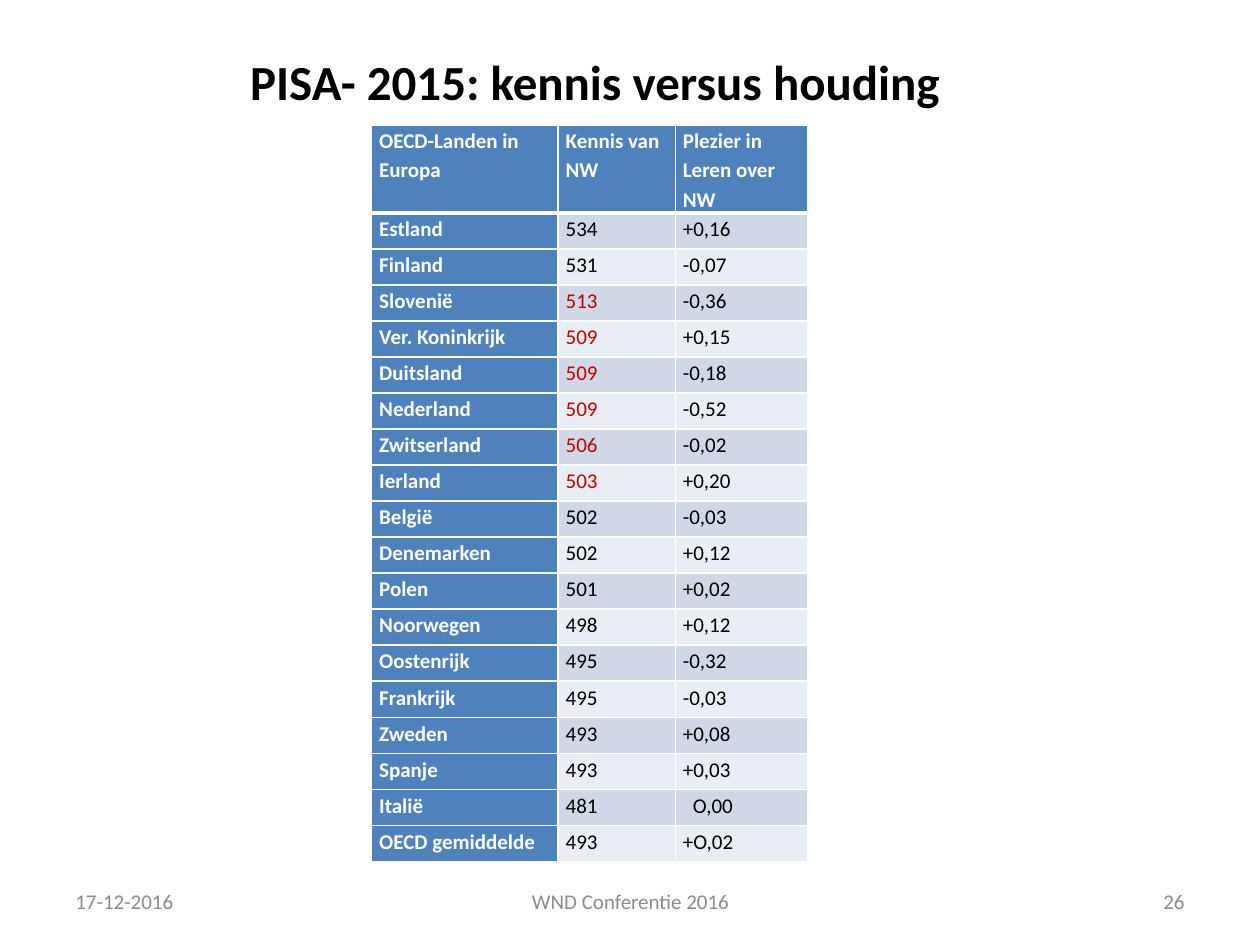
from lxml import etree
from pptx import Presentation
from pptx.dml.color import RGBColor
from pptx.enum.text import MSO_ANCHOR, PP_ALIGN
from pptx.oxml.ns import qn
from pptx.util import Emu, Inches, Pt

MIDDLE = MSO_ANCHOR.MIDDLE
LEFT, CENTER, RIGHT = PP_ALIGN.LEFT, PP_ALIGN.CENTER, PP_ALIGN.RIGHT

FONT = "Calibri"
COLORS = {
    "head": "4F81BD",
    "odd": "D0D8E8",
    "even": "E9EDF4",
    "white": "FFFFFF",
    "black": "000000",
    "red": "C00000",
    "footer": "8C8C8C",
}

# Table grid in inches
TABLE_LEFT, TABLE_TOP = 2.95, 0.99
COLUMN_WIDTHS = (1.48, 0.93, 1.05)
TABLE_HEIGHT, HEADER_HEIGHT = 5.82, 0.67

HEADINGS = ("OECD-Landen in Europa", "Kennis van NW", "Plezier in\nLeren over NW")
COUNTRIES = [
    ("Estland", "534", "+0,16"),
    ("Finland", "531", "-0,07"),
    ("Slovenië", "513", "-0,36"),
    ("Ver. Koninkrijk", "509", "+0,15"),
    ("Duitsland", "509", "-0,18"),
    ("Nederland", "509", "-0,52"),
    ("Zwitserland", "506", "-0,02"),
    ("Ierland", "503", "+0,20"),
    ("België", "502", "-0,03"),
    ("Denemarken", "502", "+0,12"),
    ("Polen", "501", "+0,02"),
    ("Noorwegen", "498", "+0,12"),
    ("Oostenrijk", "495", "-0,32"),
    ("Frankrijk", "495", "-0,03"),
    ("Zweden", "493", "+0,08"),
    ("Spanje", "493", "+0,03"),
    ("Italië", "481", "O,00"),
    ("OECD gemiddelde", "493", "+O,02"),
]
RED_SCORES = {"513", "509", "506", "503"}
UNSIGNED_INDENT = 0.08


def rgb(name):
    return RGBColor.from_string(COLORS[name])


def add_run(paragraph, text, size, color, bold=False):
    run = paragraph.add_run()
    run.text = text
    run.font.name = FONT
    run.font.size = Pt(size)
    run.font.bold = bold
    run.font.color.rgb = rgb(color)


def add_title(slide, text):
    title = slide.shapes.title
    title.left, title.top = Inches(0.75), Inches(0.3)
    title.width, title.height = Inches(8.03), Inches(0.69)
    title.text_frame.vertical_anchor = MIDDLE
    paragraph = title.text_frame.paragraphs[0]
    paragraph.alignment = CENTER
    add_run(paragraph, text, 28, "black", bold=True)


def set_borders(cell, top=1, bottom=1):
    """White lines around a cell; they must precede the fill in the XML."""
    properties = cell._tc.get_or_add_tcPr()
    sides = {"lnL": 1, "lnR": 1, "lnT": top, "lnB": bottom}
    for position, (side, points) in enumerate(sides.items()):
        line = etree.Element(qn(f"a:{side}"), w=str(Pt(points)))
        fill = etree.SubElement(line, qn("a:solidFill"))
        etree.SubElement(fill, qn("a:srgbClr"), val=COLORS["white"])
        properties.insert(position, line)


def fill_cell(cell, text, fill, color, bold, indent=0):
    cell.fill.solid()
    cell.fill.fore_color.rgb = rgb(fill)
    cell.margin_left = cell.margin_right = Inches(0.06)
    cell.margin_top = cell.margin_bottom = 0
    frame = cell.text_frame
    for number, line in enumerate(text.split("\n")):
        paragraph = frame.add_paragraph() if number else frame.paragraphs[0]
        paragraph.line_spacing = 1.15
        if indent:
            paragraph._p.get_or_add_pPr().set("marL", str(Inches(indent)))
        add_run(paragraph, line, 12, color, bold)


def add_score_table(slide):
    rows = [HEADINGS] + COUNTRIES
    table = slide.shapes.add_table(
        len(rows), len(HEADINGS), Inches(TABLE_LEFT), Inches(TABLE_TOP),
        Inches(sum(COLUMN_WIDTHS)), Inches(TABLE_HEIGHT)).table
    table.first_col = True

    for column, width in zip(table.columns, COLUMN_WIDTHS):
        column.width = Inches(width)
    country_height = (TABLE_HEIGHT - HEADER_HEIGHT) / len(COUNTRIES)
    for r, row in enumerate(table.rows):
        row.height = Inches(country_height if r else HEADER_HEIGHT)

    for r, values in enumerate(rows):
        for c, value in enumerate(values):
            cell = table.cell(r, c)
            if r == 0 or c == 0:
                fill_cell(cell, value, "head", "white", bold=True)
            else:
                band = "odd" if r % 2 else "even"
                color = "red" if value in RED_SCORES else "black"
                unsigned = c == 2 and value[0] not in "+-"
                fill_cell(cell, value, band, color, bold=False,
                          indent=UNSIGNED_INDENT if unsigned else 0)
            # A thicker line parts the headings from the countries
            set_borders(cell, top=3 if r == 1 else 1, bottom=3 if r == 0 else 1)


def add_footer(slide, left, width, text, alignment):
    box = slide.shapes.add_textbox(
        Inches(left), Inches(6.95), Inches(width), Inches(0.4))
    box.text_frame.word_wrap = True
    box.text_frame.vertical_anchor = MIDDLE
    paragraph = box.text_frame.paragraphs[0]
    paragraph.alignment = alignment
    add_run(paragraph, text, 12, "footer")


def main():
    presentation = Presentation()
    presentation.slide_width, presentation.slide_height = Emu(9144000), Emu(6858000)
    slide = presentation.slides.add_slide(presentation.slide_layouts[5])

    add_title(slide, "PISA- 2015: kennis versus houding ")
    add_score_table(slide)

    # Date, conference and page number
    add_footer(slide, 0.5, 2.33, "17-12-2016", LEFT)
    add_footer(slide, 3.42, 3.17, "WND Conferentie 2016", CENTER)
    add_footer(slide, 7.17, 2.33, "26", RIGHT)

    presentation.save("out.pptx")


if __name__ == "__main__":
    main()
